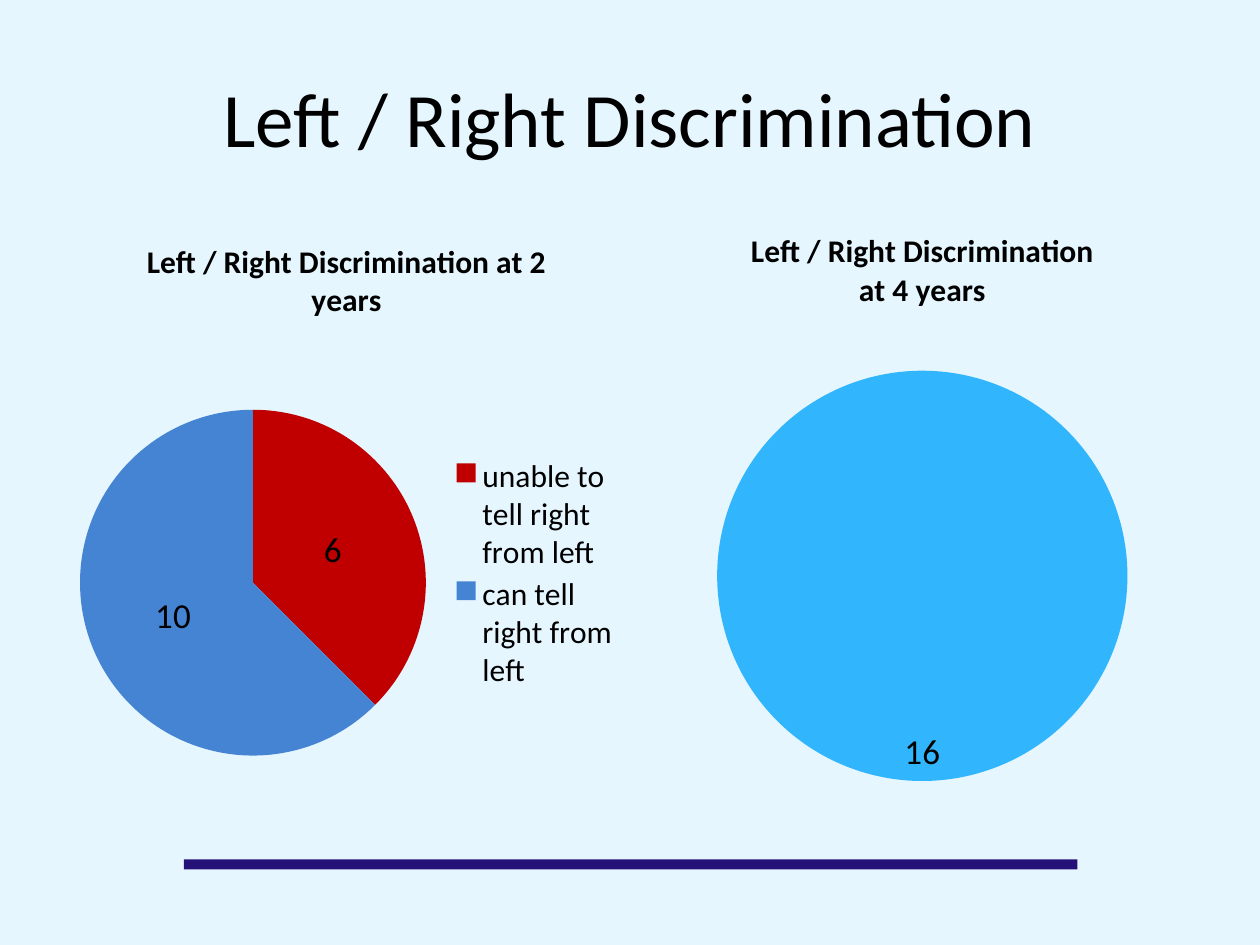
import pptx
import pptx.chart.data
import pptx.dml.color
import pptx.enum.chart
import pptx.enum.shapes
import pptx.enum.text
import pptx.oxml
import pptx.oxml.ns
import pptx.util
from pptx.util import Inches

COLORS = {
    "background": "E6F6FE",
    "rule": "251278",
    "text": "000000",
    "unable": "C00000",
    "able": "4584D3",
    "all_able": "31B6FD",
}
LabelPosition = pptx.enum.chart.XL_LABEL_POSITION


class SlideBuilder:
    font_name = "Calibri"

    def __init__(self, presentation):
        self.slide = presentation.slides.add_slide(presentation.slide_layouts[5])
        self.fill(self.slide.background.fill, "background")

    def color(self, name):
        return pptx.dml.color.RGBColor.from_string(COLORS[name])

    def fill(self, fill, name):
        fill.solid()
        fill.fore_color.rgb = self.color(name)

    def style_font(self, font, size, bold=False):
        font.name = self.font_name
        font.size = pptx.util.Pt(size)
        font.bold = bold
        font.color.rgb = self.color("text")

    def rule(self, left, top, width, height):
        shape = self.slide.shapes.add_shape(
            pptx.enum.shapes.MSO_SHAPE.RECTANGLE,
            Inches(left), Inches(top), Inches(width), Inches(height))
        shape.shadow.inherit = False
        self.fill(shape.fill, "rule")
        shape.line.fill.background()

    def title(self, text, left, top, width, height):
        shape = self.slide.shapes.title
        shape.left, shape.top = Inches(left), Inches(top)
        shape.width, shape.height = Inches(width), Inches(height)
        shape.text_frame.text = text
        shape.text_frame.vertical_anchor = pptx.enum.text.MSO_ANCHOR.MIDDLE
        paragraph = shape.text_frame.paragraphs[0]
        paragraph.alignment = pptx.enum.text.PP_ALIGN.CENTER
        self.style_font(paragraph.font, 44)

    def pie(self, title, box, plot_box, slices, label_position, legend_box=None):
        data = pptx.chart.data.CategoryChartData()
        data.categories = [category for category, _, _ in slices]
        data.add_series("Series 1", [value for _, value, _ in slices])
        chart = self.slide.shapes.add_chart(
            pptx.enum.chart.XL_CHART_TYPE.PIE, *map(Inches, box), data).chart
        self.style_font(chart.font, 10)

        chart.has_title = True
        chart.chart_title.include_in_layout = False
        chart.chart_title.text_frame.text = title
        paragraph = chart.chart_title.text_frame.paragraphs[0]
        self.style_font(paragraph.font, 18, bold=True)

        chart.has_legend = legend_box is not None
        if legend_box:
            chart.legend.position = pptx.enum.chart.XL_LEGEND_POSITION.RIGHT
            chart.legend.include_in_layout = False
            self.style_font(chart.legend.font, 18)
            self.place(chart, "legend", legend_box)

        plot = chart.plots[0]
        plot.vary_by_categories = True
        series = plot.series[0]
        for index, (_, _, color) in enumerate(slices):
            self.fill(series.points[index].format.fill, color)
        labels = series.data_labels
        labels.show_value = True
        labels.show_percentage = False
        labels.position = label_position
        self.style_font(labels.font, 20)
        self.place(chart, "plotArea", plot_box)

    def place(self, chart, part_name, box):
        part = chart.element.find(".//" + pptx.oxml.ns.qn(f"c:{part_name}"))
        for layout in part.findall(pptx.oxml.ns.qn("c:layout")):
            part.remove(layout)
        is_plot = part_name == "plotArea"
        target = '<c:layoutTarget val="inner"/>' if is_plot else ""
        sizes = "".join(f'<c:{name} val="{value}"/>' for name, value in zip("xywh", box))
        part.insert(0 if is_plot else 1, pptx.oxml.parse_xml(
            f'<c:layout {pptx.oxml.ns.nsdecls("c")}><c:manualLayout>{target}'
            f'<c:xMode val="edge"/><c:yMode val="edge"/>{sizes}'
            '</c:manualLayout></c:layout>'))


def main():
    presentation = pptx.Presentation()
    presentation.slide_width = Inches(10)
    presentation.slide_height = Inches(7.5)
    builder = SlideBuilder(presentation)
    builder.rule(1.46, 6.82, 7.09, 0.08)
    builder.title("Left / Right Discrimination", 0.5, 0.3, 9, 1.25)
    builder.pie(
        "Left / Right Discrimination at 2 years",
        (0.5, 1.7, 4.5, 5), (0.03, 0.31, 0.61, 0.55),
        [("unable to tell right from left", 6, "unable"),
         ("can tell right from left", 10, "able")],
        LabelPosition.CENTER, legend_box=(0.69, 0.38, 0.29, 0.38))
    builder.pie(
        "Left / Right Discrimination at 4 years",
        (5.55, 1.62, 3.54, 4.96), (0.04, 0.26, 0.92, 0.67),
        [("1", 16, "all_able")],
        LabelPosition.INSIDE_END)
    presentation.save("out.pptx")


if __name__ == "__main__":
    main()
